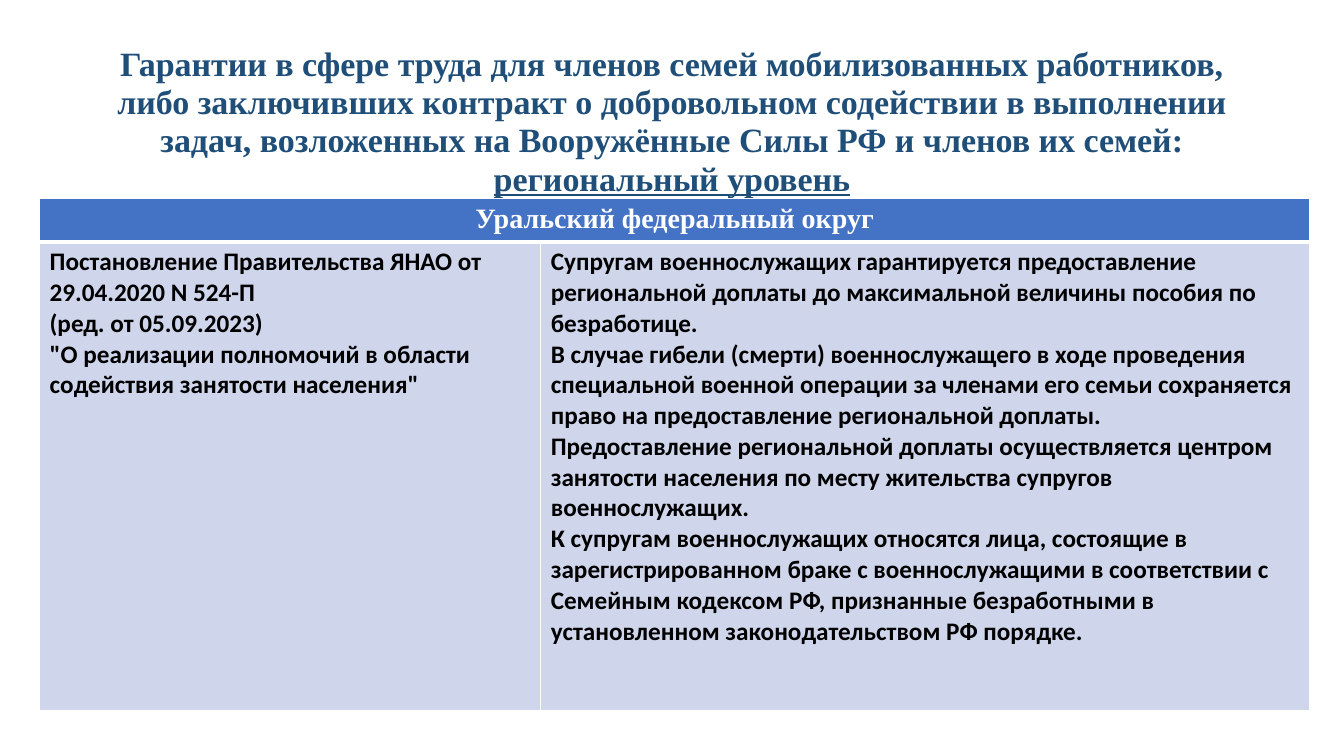
import dataclasses

import pptx
import pptx.dml.color
import pptx.enum.text
import pptx.oxml
import pptx.util
from pptx.oxml.ns import nsdecls

Pt = pptx.util.Pt
Align = pptx.enum.text.PP_ALIGN
Anchor = pptx.enum.text.MSO_ANCHOR


@dataclasses.dataclass(frozen=True)
class Theme:
    title_font: str = "Times New Roman"
    body_font: str = "Calibri"
    title_size: float = 24.3
    header_size: float = 20
    body_size: float = 18
    title_color: str = "1F4E79"
    header_fill: str = "4472C4"
    body_fill: str = "CFD5EA"
    white: str = "FFFFFF"
    black: str = "000000"


THEME = Theme()

TITLE = (
    "Гарантии в сфере труда для членов семей мобилизованных работников, "
    "либо заключивших контракт о добровольном содействии в выполнении задач, "
    "возложенных на Вооружённые Силы РФ и членов их семей: "
)
TITLE_LEVEL = "региональный уровень"
DISTRICT = "Уральский федеральный округ"
DECREE = [
    "Постановление Правительства ЯНАО от 29.04.2020 N 524-П",
    "(ред. от 05.09.2023)",
    '"О реализации полномочий в области содействия занятости населения"',
]
GUARANTEES = [
    "Супругам военнослужащих гарантируется предоставление региональной доплаты "
    "до максимальной величины пособия по безработице.",
    "В случае гибели (смерти) военнослужащего в ходе проведения специальной "
    "военной операции за членами его семьи сохраняется право на предоставление "
    "региональной доплаты.",
    "Предоставление региональной доплаты осуществляется центром занятости "
    "населения по месту жительства супругов военнослужащих.",
    "К супругам военнослужащих относятся лица, состоящие в зарегистрированном "
    "браке с военнослужащими в соответствии с Семейным кодексом РФ, признанные "
    "безработными в установленном законодательством РФ порядке.",
]


def rgb(color):
    return pptx.dml.color.RGBColor.from_string(color)


def add_span(para, text, font, size, color, underline=None):
    span = para.add_run()
    span.text = text
    span.font.name = font
    span.font.size = Pt(size)
    span.font.color.rgb = rgb(color)
    span.font.bold = True
    span.font.underline = underline


def add_title(page):
    box = page.shapes.title
    box.left, box.top, box.width, box.height = Pt(66), Pt(28.8), Pt(828), Pt(104.4)
    frame = box.text_frame
    frame.word_wrap = True
    frame.auto_size = pptx.enum.text.MSO_AUTO_SIZE.NONE
    frame.vertical_anchor = Anchor.TOP
    para = frame.paragraphs[0]
    para.alignment = Align.CENTER
    para.line_spacing = 0.94
    style = (THEME.title_font, THEME.title_size, THEME.title_color)
    add_span(para, TITLE, *style)
    add_span(para, TITLE_LEVEL, *style, underline=True)


def set_borders(cell, top=1, bottom=1):
    properties = cell._tc.get_or_add_tcPr()
    widths = {"lnL": 1, "lnR": 1, "lnT": top, "lnB": bottom}
    # Borders come before the fill in the cell properties
    for place, (side, width) in enumerate(widths.items()):
        properties.insert(place, pptx.oxml.parse_xml(
            f'<a:{side} {nsdecls("a")} w="{Pt(width)}"><a:solidFill>'
            f'<a:srgbClr val="{THEME.white}"/></a:solidFill></a:{side}>'))


def fill_cell(cell, texts, fill, font, size, color, align):
    cell.fill.solid()
    cell.fill.fore_color.rgb = rgb(fill)
    cell.vertical_anchor = Anchor.TOP
    frame = cell.text_frame
    for index, text in enumerate(texts):
        para = frame.add_paragraph() if index else frame.paragraphs[0]
        para.alignment = align
        add_span(para, text, font, size, color)


def add_guarantee_table(page):
    columns, rows = (358, 549.5), (31, 334.8)
    table = page.shapes.add_table(
        len(rows), len(columns), Pt(28.3), Pt(141.8), Pt(sum(columns)), Pt(sum(rows))
    ).table
    for column, width in zip(table.columns, columns):
        column.width = Pt(width)
    for row, height in zip(table.rows, rows):
        row.height = Pt(height)

    # Header across both columns
    header = table.cell(0, 0)
    header.merge(table.cell(0, 1))
    fill_cell(header, [DISTRICT], THEME.header_fill, THEME.title_font,
              THEME.header_size, THEME.white, Align.CENTER)

    # Decree on the left, its guarantees on the right
    for column, texts in enumerate((DECREE, GUARANTEES)):
        fill_cell(table.cell(1, column), texts, THEME.body_fill, THEME.body_font,
                  THEME.body_size, THEME.black, Align.LEFT)
        set_borders(table.cell(0, column), bottom=3)
        set_borders(table.cell(1, column), top=3)


def main():
    deck = pptx.Presentation()
    deck.slide_width, deck.slide_height = Pt(960), Pt(540)
    page = deck.slides.add_slide(deck.slide_layouts.get_by_name("Title Only"))
    page.background.fill.solid()
    page.background.fill.fore_color.rgb = rgb(THEME.white)
    add_title(page)
    add_guarantee_table(page)
    deck.save("out.pptx")


if __name__ == "__main__":
    main()
